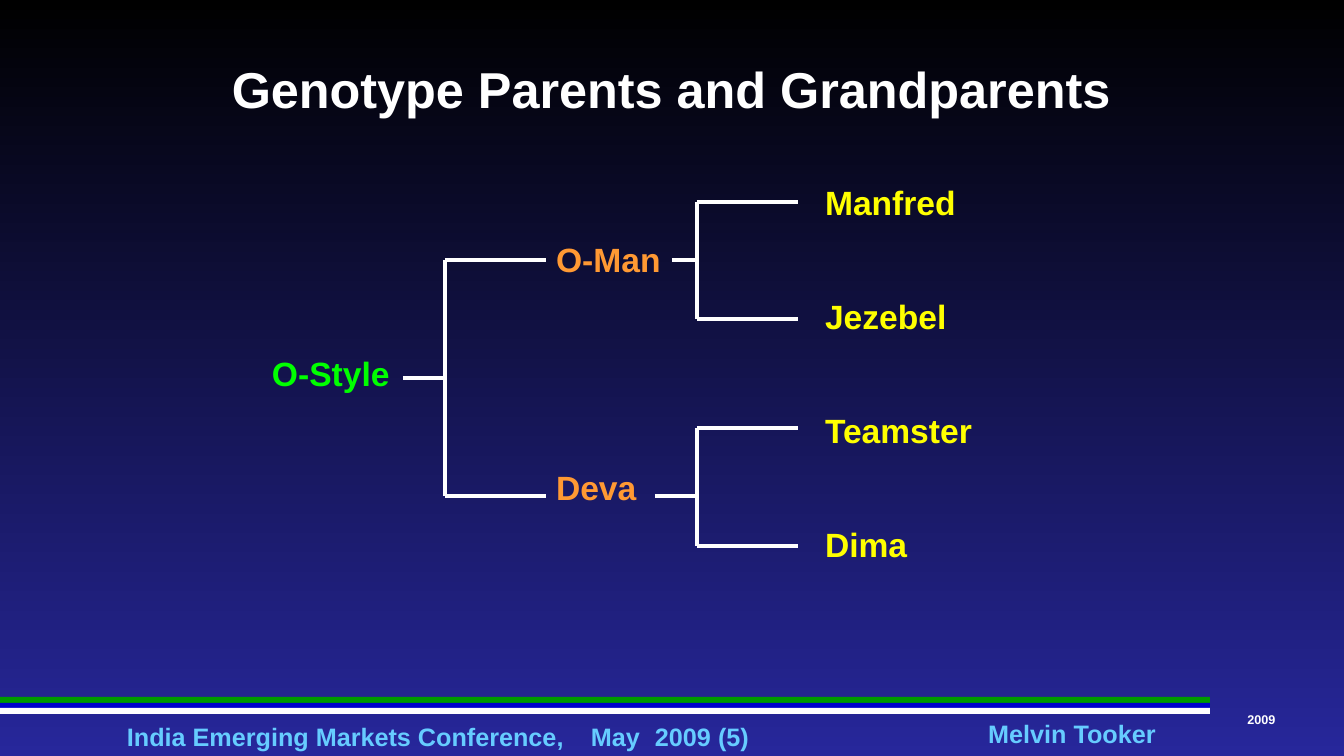
from lxml import etree
from pptx import Presentation, util as u
from pptx.dml.color import RGBColor
from pptx.enum import shapes, text
from pptx.oxml.ns import qn

PX = 914400 / 100.8
BLACK = RGBColor(0x00, 0x00, 0x00)
NAVY = RGBColor(0x27, 0x27, 0x9B)
WHITE = RGBColor(0xFF, 0xFF, 0xFF)
SKY = RGBColor(0x66, 0xCC, 0xFF)
GREEN = RGBColor(0x00, 0x99, 0x00)
BLUE = RGBColor(0x00, 0x00, 0xCC)
LIME = RGBColor(0x00, 0xFF, 0x00)
AMBER = RGBColor(0xFF, 0x99, 0x33)
YELLOW = RGBColor(0xFF, 0xFF, 0x00)
PLAIN = "{2D5ABB26-0587-4C30-8999-92F81FD0307C}"  # no style, no grid


def px(*vals):
    return [u.Emu(round(v * PX)) for v in vals]


def write(frame, words, size, color, align=text.PP_ALIGN.LEFT, tabs=()):
    """Put one bold line in a text frame; tabs are px from its left edge."""
    para = frame.paragraphs[0]
    para.alignment = align
    if tabs:
        stops = etree.SubElement(para._p.get_or_add_pPr(), qn("a:tabLst"))
        for pos in px(*tabs):
            etree.SubElement(stops, qn("a:tab"), pos=str(pos), algn="l")
    run = para.add_run()
    run.text = words
    run.font.name = "Arial"
    run.font.size = u.Pt(size)
    run.font.bold = True
    run.font.color.rgb = color


deck = Presentation()
deck.slide_width, deck.slide_height = px(1344, 756)
slide = deck.slides.add_slide(deck.slide_layouts[6])

back = slide.background.fill
back.gradient()
back.gradient_angle = 270
for stop, color in zip(back.gradient_stops, (BLACK, NAVY)):
    stop.color.rgb = color

# Footer bands
for top, color in ((697, GREEN), (703, BLUE), (708, WHITE)):
    band = slide.shapes.add_shape(shapes.MSO_SHAPE.RECTANGLE, *px(0, top, 1210, 6))
    band.shadow.inherit = False
    band.fill.solid()
    band.fill.fore_color.rgb = color
    band.line.fill.background()

# Title and footer text
MID = text.PP_ALIGN.CENTER
labels = (
    ((33, 25, 1277, 126), "Genotype Parents and Grandparents", 36, WHITE, MID, ()),
    ((127, 721, 791, 30), "India Emerging Markets Conference,\tMay\t2009 (5)", 18, SKY,
     text.PP_ALIGN.LEFT, (464, 528)),
    ((980, 718, 184, 30), "Melvin Tooker", 18, SKY, MID, ()),
    ((1243, 712, 37, 15), "2009", 9, WHITE, MID, ()),
)
for place, words, size, color, align, tabs in labels:
    frame = slide.shapes.add_textbox(*px(*place)).text_frame
    frame.word_wrap = True
    frame.vertical_anchor = text.MSO_ANCHOR.MIDDLE
    frame.margin_left = frame.margin_right = 0
    frame.margin_top = frame.margin_bottom = 0
    write(frame, words, size, color, align, tabs)

# Pedigree table: one column per generation
names = {
    (4, 0): ("O-Style", LIME),
    (2, 1): ("O-Man", AMBER),
    (6, 1): ("Deva", AMBER),
    (1, 2): ("Manfred", YELLOW),
    (3, 2): ("Jezebel", YELLOW),
    (5, 2): ("Teamster", YELLOW),
    (7, 2): ("Dima", YELLOW),
}
table = slide.shapes.add_table(9, 3, *px(244, 118, 899, 513)).table
table.first_row = table.horz_banding = False
table._tbl.tblPr.find(qn("a:tableStyleId")).text = PLAIN
for col, width in zip(table.columns, px(302, 269, 328)):
    col.width = width
for row in table.rows:
    row.height = px(57)[0]
for cell in table.iter_cells():
    cell.fill.background()
    cell.vertical_anchor = text.MSO_ANCHOR.MIDDLE
for (row, col), (name, color) in names.items():
    write(table.cell(row, col).text_frame, name, 24, color)
table.cell(4, 0).margin_left = px(28)[0]

# Brackets: stem start, spine x, branch end, then stem, upper and lower y
brackets = (
    (403, 445, 546, 378, 260, 496),
    (672, 697, 798, 260, 202, 319),
    (655, 697, 798, 496, 428, 546),
)
for stem, spine, end, mid, high, low in brackets:
    for ends in (
        (stem, mid, spine, mid),
        (spine, high, spine, low),
        (spine, high, end, high),
        (spine, low, end, low),
    ):
        line = slide.shapes.add_connector(shapes.MSO_CONNECTOR.STRAIGHT, *px(*ends))
        line.line.color.rgb = WHITE
        line.line.width = u.Pt(3)
        etree.SubElement(line._element.spPr, qn("a:effectLst"))

deck.save("out.pptx")
